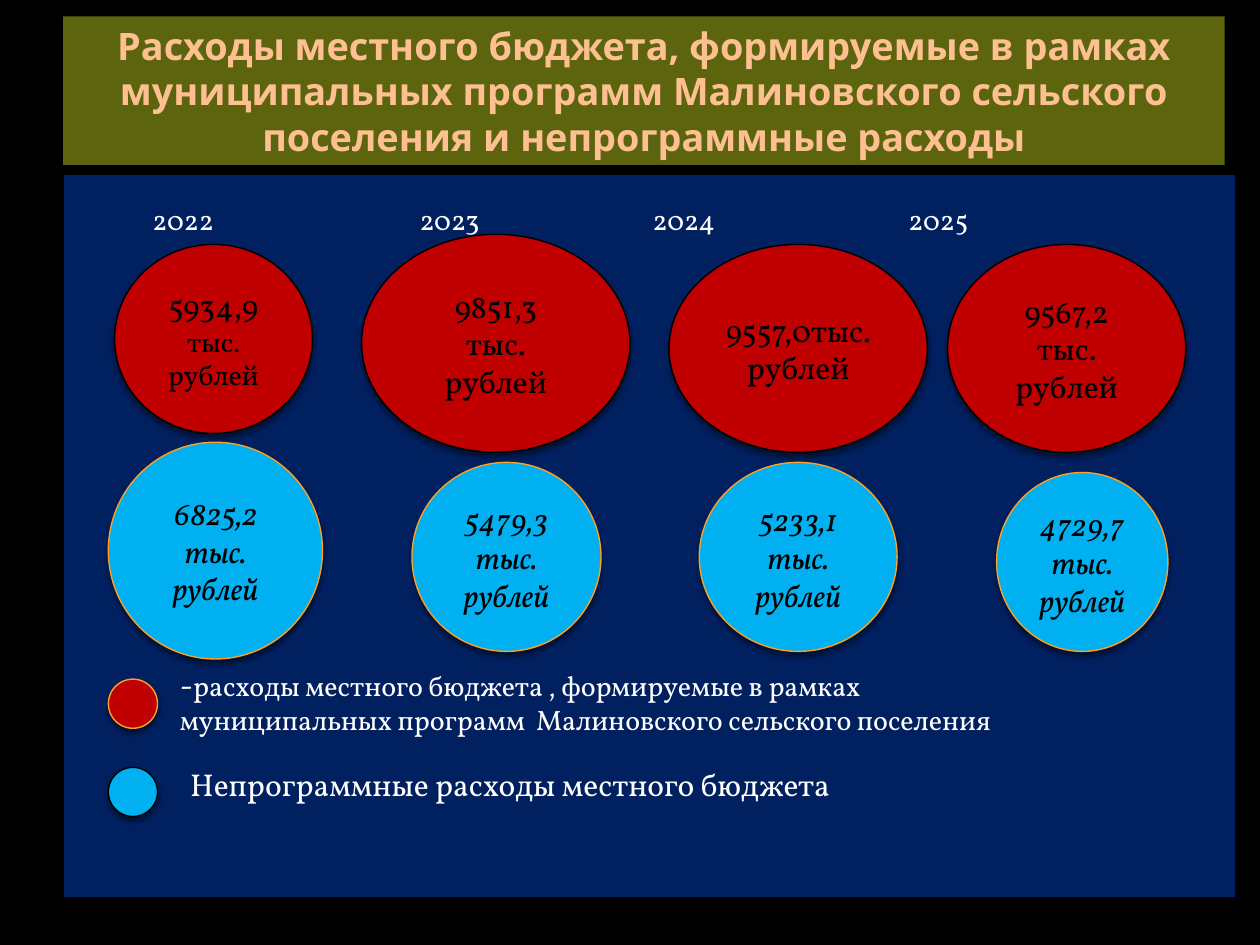
from dataclasses import dataclass

from lxml import etree
from pptx import Presentation, util as u
from pptx.dml.color import RGBColor
from pptx.enum import shapes, text
from pptx.oxml import ns

COLUMNS, ROWS = 100, 75
CELL = u.Inches(0.1)


@dataclass(frozen=True)
class Theme:
    background: str = "000000"
    banner: str = "5C650D"
    heading: str = "FFC091"
    panel: str = "002060"
    program: str = "C00000"
    other: str = "00B0F0"
    accent: str = "FDA023"
    dark: str = "000000"
    light: str = "FFFFFF"
    heading_font: str = "Noto Sans"
    body_font: str = "Vollkorn"
    heading_size: float = 21.6
    large: float = 18
    small: float = 16
    outline: float = 0.79


THEME = Theme()


@dataclass(frozen=True)
class Box:
    """Left, top, width and height in grid columns and rows."""
    left: float
    top: float
    width: float
    height: float

    def lengths(self) -> list[int]:
        return [int(n * CELL) for n in (self.left, self.top, self.width, self.height)]


@dataclass(frozen=True)
class Bubble:
    """Circle standing on a row, centred on a column."""
    center: float
    bottom: float
    width: float
    height: float
    lines: tuple[str, ...] = ()
    unit_size: float = THEME.large

    @property
    def box(self) -> Box:
        return Box(self.center - self.width / 2, self.bottom - self.height,
                   self.width, self.height)


UNIT = "тыс. рублей"
PROGRAM = [
    Bubble(16.95, 34.4, 15.7, 15, ("5934,9", UNIT), THEME.small),
    Bubble(39.35, 35.9, 21.3, 17.3, ("9851,3", UNIT)),
    Bubble(63.35, 35.9, 20.5, 16.5, ("9557,0" + UNIT,)),
    Bubble(84.65, 35.9, 18.9, 16.5, ("9567,2", UNIT)),
]
OTHER = [
    Bubble(17.1, 52.3, 17, 17.2, ("6825,2", UNIT)),
    Bubble(40.2, 51.7, 15, 15, ("5479,3", UNIT)),
    Bubble(63.35, 51.7, 15.7, 15, ("5233,1", UNIT)),
    Bubble(85.9, 51.7, 13.6, 14.2, ("4729,7", UNIT)),
]
YEARS = ("2022", "2023", "2024", "2025")
YEAR_STOPS = (21.2, 39.7, 60)  # columns from the first year


def set_font(font, size: float, color: str, name: str = THEME.body_font,
             bold: bool = False, italic: bool = False) -> None:
    font.name, font.size = name, u.Pt(size)
    font.bold, font.italic = bold, italic
    font.color.rgb = RGBColor.from_string(color)


def add_rectangle(slide, box: Box, fill: str):
    shape = slide.shapes.add_shape(shapes.MSO_SHAPE.RECTANGLE, *box.lengths())
    shape.shadow.inherit = False
    shape.fill.solid()
    shape.fill.fore_color.rgb = RGBColor.from_string(fill)
    shape.line.fill.background()
    return shape


def add_shadow(shape) -> None:
    shape.shadow.inherit = False
    effects = shape._element.spPr.find(ns.qn("a:effectLst"))
    shadow = etree.SubElement(effects, ns.qn("a:outerShdw"), blurRad=str(u.Pt(3)),
                              dist=str(u.Pt(2.4)), dir="5400000", rotWithShape="0")
    color = etree.SubElement(shadow, ns.qn("a:srgbClr"), val=THEME.dark)
    etree.SubElement(color, ns.qn("a:alpha"), val="45000")


def add_bubble(slide, bubble: Bubble, fill: str, line: str, italic: bool = False) -> None:
    shape = slide.shapes.add_shape(shapes.MSO_SHAPE.OVAL, *bubble.box.lengths())
    add_shadow(shape)
    shape.fill.solid()
    shape.fill.fore_color.rgb = RGBColor.from_string(fill)
    shape.line.color.rgb = RGBColor.from_string(line)
    shape.line.width = u.Pt(THEME.outline)
    frame = shape.text_frame
    frame.vertical_anchor = text.MSO_ANCHOR.MIDDLE
    for index, words in enumerate(bubble.lines):
        paragraph = frame.add_paragraph() if index else frame.paragraphs[0]
        paragraph.text = words
        paragraph.alignment = text.PP_ALIGN.CENTER
        set_font(paragraph.font, bubble.unit_size if index else THEME.large,
                 THEME.dark, italic=italic)


def add_label(slide, box: Box, *runs: tuple[str, float]) -> None:
    frame = slide.shapes.add_textbox(*box.lengths()).text_frame
    frame.word_wrap = True
    frame.auto_size = text.MSO_AUTO_SIZE.SHAPE_TO_FIT_TEXT
    for words, size in runs:
        run = frame.paragraphs[0].add_run()
        run.text = words
        set_font(run.font, size, THEME.light)


def add_title(slide) -> None:
    frame = add_rectangle(slide, Box(5, 1.3, 92.2, 11.8), THEME.banner).text_frame
    frame.vertical_anchor = text.MSO_ANCHOR.MIDDLE
    paragraph = frame.paragraphs[0]
    paragraph.text = ("Расходы местного бюджета, формируемые в рамках муниципальных "
                      "программ Малиновского сельского поселения и непрограммные расходы")
    paragraph.alignment = text.PP_ALIGN.CENTER
    set_font(paragraph.font, THEME.heading_size, THEME.heading,
             THEME.heading_font, bold=True)


def add_panel(slide) -> None:
    frame = add_rectangle(slide, Box(5.1, 13.9, 92.9, 57.3), THEME.panel).text_frame
    frame.vertical_anchor = text.MSO_ANCHOR.TOP
    frame.margin_left, frame.margin_top = 7 * CELL, int(2.2 * CELL)
    paragraph = frame.paragraphs[0]
    paragraph.text = "\t".join(YEARS)
    paragraph.alignment = text.PP_ALIGN.LEFT
    set_font(paragraph.font, THEME.small, THEME.light)
    # Tab stops go before the paragraph's default run properties
    properties = paragraph._p.get_or_add_pPr()
    stops = etree.Element(ns.qn("a:tabLst"))
    for column in YEAR_STOPS:
        etree.SubElement(stops, ns.qn("a:tab"), pos=str(int(column * CELL)), algn="l")
    properties.insert(0, stops)


def main() -> None:
    presentation = Presentation()
    presentation.slide_width, presentation.slide_height = COLUMNS * CELL, ROWS * CELL
    slide = presentation.slides.add_slide(presentation.slide_layouts[6])
    slide.background.fill.solid()
    slide.background.fill.fore_color.rgb = RGBColor.from_string(THEME.background)

    # Heading and panel with the years
    add_title(slide)
    add_panel(slide)

    # Spending by year
    for program, other in zip(PROGRAM, OTHER):
        add_bubble(slide, program, THEME.program, THEME.dark)
        add_bubble(slide, other, THEME.other, THEME.accent, italic=True)

    # Legend
    add_bubble(slide, Bubble(10.55, 57.8, 3.9, 3.9), THEME.program, THEME.accent)
    add_bubble(slide, Bubble(10.55, 64.8, 3.9, 3.9), THEME.other, THEME.dark)
    add_label(slide, Box(13.3, 52.3, 72.9, 6.7), ("-", THEME.large),
              ("расходы местного бюджета , формируемые в рамках муниципальных "
               "программ  Малиновского сельского поселения", THEME.small))
    add_label(slide, Box(14.1, 60.2, 68.8, 4),
              ("Непрограммные расходы местного бюджета", THEME.large))

    presentation.save("out.pptx")


if __name__ == "__main__":
    main()
